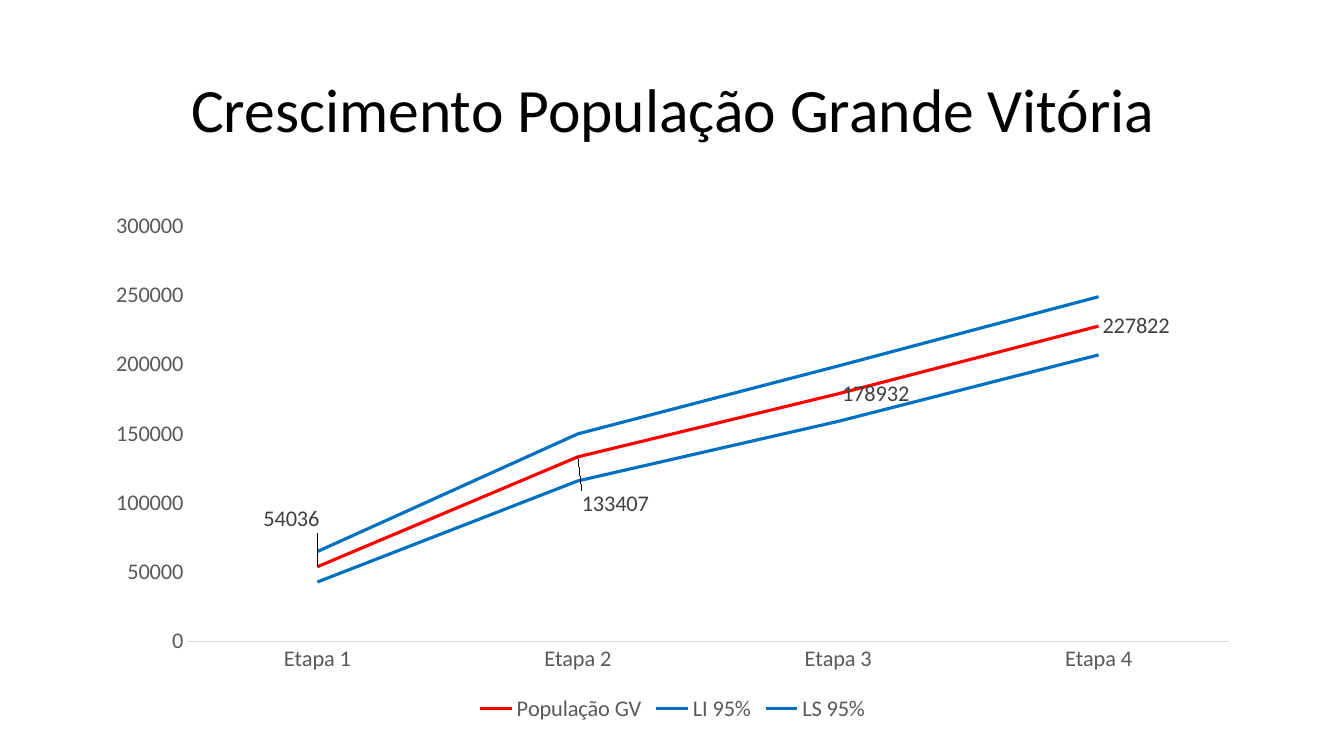
from lxml import etree
from pptx import Presentation
from pptx.chart.data import CategoryChartData
from pptx.dml.color import RGBColor
from pptx.enum.chart import (XL_CHART_TYPE, XL_LABEL_POSITION, XL_LEGEND_POSITION,
                             XL_MARKER_STYLE, XL_TICK_MARK)
from pptx.enum.text import MSO_ANCHOR, PP_ALIGN
from pptx.oxml.ns import qn
from pptx.util import Pt

PX = 914400 / 100.8
BLACK = RGBColor(0x00, 0x00, 0x00)
LABEL_GREY = RGBColor(0x40, 0x40, 0x40)
AXIS_GREY = RGBColor(0x59, 0x59, 0x59)
LINE_GREY = RGBColor(0xD9, 0xD9, 0xD9)
RED = RGBColor(0xFF, 0x00, 0x00)
BLUE = RGBColor(0x00, 0x70, 0xC0)

SERIES = [
    ("População GV", [54036, 133407, 178932, 227822], RED),
    ("LI 95%", [43000, 116000, 159000, 207000], BLUE),
    ("LS 95%", [65000, 150000, 199000, 249000], BLUE),
]
# Point index and label shift, as fractions of the chart's width and height
LABEL_SHIFTS = [(0, -0.05, -0.09), (1, 0, 0.09)]


def emu(*lengths):
    return [round(n * PX) for n in lengths]


def set_font(font, size, color):
    font.name = "Calibri"
    font.size = Pt(size)
    font.color.rgb = color


prs = Presentation()
prs.slide_width, prs.slide_height = emu(1344, 756)
s = prs.slides.add_slide(prs.slide_layouts[6])

tf = s.shapes.add_textbox(*emu(94, 40, 1159, 146)).text_frame
tf.word_wrap = True
tf.vertical_anchor = MSO_ANCHOR.MIDDLE
p = tf.paragraphs[0]
p.alignment = PP_ALIGN.CENTER
p.line_spacing = 0.9
r = p.add_run()
r.text = "Crescimento População Grande Vitória"
set_font(r.font, 44, BLACK)

data = CategoryChartData()
data.categories = [f"Etapa {n}" for n in range(1, 5)]
for name, values, color in SERIES:
    data.add_series(name, values)
chart = s.shapes.add_chart(XL_CHART_TYPE.LINE, *emu(93, 202, 1159, 525), data).chart
chart.has_title = False
set_font(chart.font, 10, BLACK)

chart.has_legend = True
chart.legend.position = XL_LEGEND_POSITION.BOTTOM
chart.legend.include_in_layout = False
set_font(chart.legend.font, 16, AXIS_GREY)

for axis in (chart.category_axis, chart.value_axis):
    axis.has_major_gridlines = False
    axis.major_tick_mark = XL_TICK_MARK.NONE
    axis.minor_tick_mark = XL_TICK_MARK.NONE
    set_font(axis.tick_labels.font, 16, AXIS_GREY)
chart.category_axis.format.line.color.rgb = LINE_GREY
chart.category_axis.format.line.width = Pt(0.75)
chart.value_axis.format.line.fill.background()
chart.value_axis.minimum_scale = 0
chart.value_axis.maximum_scale = 300000
chart.value_axis.major_unit = 50000

plot = chart.plots[0]
plot.vary_by_categories = False
for series, (name, values, color) in zip(plot.series, SERIES):
    series.smooth = False
    series.marker.style = XL_MARKER_STYLE.NONE
    series.format.line.color.rgb = color
    series.format.line.width = Pt(2.25)

population = plot.series[0]
labels = population.data_labels
labels.show_value = True
labels.position = XL_LABEL_POSITION.RIGHT
set_font(labels.font, 16, LABEL_GREY)
for idx, dx, dy in LABEL_SHIFTS:
    label = population.points[idx].data_label
    label.position = XL_LABEL_POSITION.RIGHT
    set_font(label.font, 16, LABEL_GREY)
    layout = etree.Element(qn("c:layout"))
    manual = etree.SubElement(layout, qn("c:manualLayout"))
    for tag, shift in (("c:x", dx), ("c:y", dy)):
        etree.SubElement(manual, qn(tag)).set("val", str(shift))
    labels._element.findall(qn("c:dLbl"))[idx].insert(1, layout)

prs.save("out.pptx")
